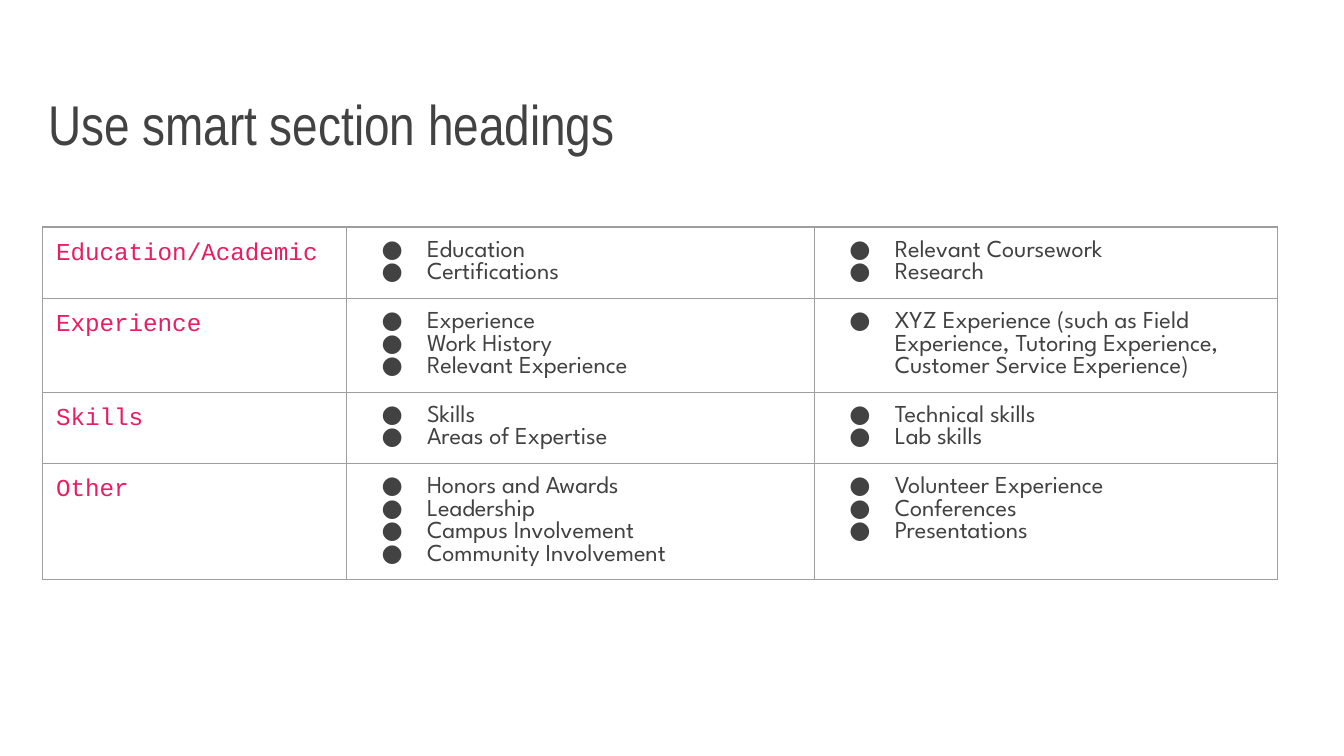
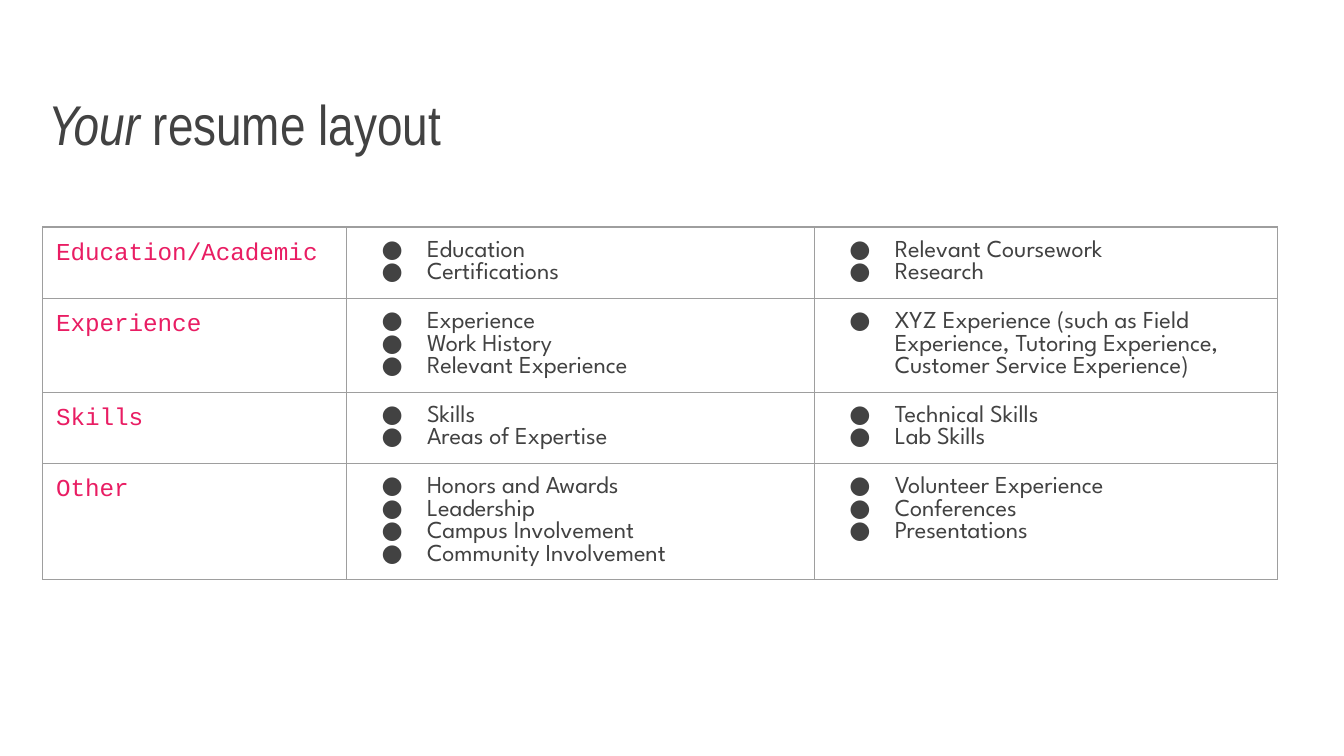
from lxml.etree import SubElement as Sub
from pptx import Presentation
from pptx.dml.color import RGBColor as RGB
from pptx.enum.text import MSO_ANCHOR as Anchor, MSO_AUTO_SIZE as Auto, PP_ALIGN as Align
from pptx.oxml.ns import qn
from pptx.util import Cm, Pt

INK = RGB(0x42, 0x42, 0x42)
PINK = RGB(0xE9, 0x1D, 0x63)
RULE = RGB(0x9E, 0x9E, 0x9E)
HEAD, LABEL, BODY = "Arial Narrow", "Courier New", "League Spartan"
INSET = Cm(0.25)
COLS = (5.74, 8.84, 8.76)
ROW = 1.07

GROUPS = (
    ("Education/Academic",
     ("Education", "Certifications"),
     ("Relevant Coursework", "Research")),
    ("Experience",
     ("Experience", "Work History", "Relevant Experience"),
     ("XYZ Experience (such as Field Experience, Tutoring Experience, "
      "Customer Service Experience)",)),
    ("Skills",
     ("Skills", "Areas of Expertise"),
     ()),
    ("Other",
     ("Honors and Awards", "Leadership", "Campus Involvement", "Community Involvement"),
     ("Volunteer Experience", "Conferences", "Presentations")),
)


def write(para, text, font=BODY, size=13, color=INK, italic=False):
    """Add one formatted run to a paragraph."""
    run = para.add_run()
    run.text = text
    run.font.name = font
    run.font.size = Pt(size)
    run.font.color.rgb = color
    run.font.italic = italic


def bullet(para):
    """Give a paragraph a hanging round bullet."""
    props = para._p.get_or_add_pPr()
    props.set("marL", str(Cm(1.27)))
    props.set("indent", str(Cm(-0.86)))
    tint = Sub(props, qn("a:buClr"))
    Sub(tint, qn("a:srgbClr"), val=str(INK))
    Sub(props, qn("a:buFont"), typeface=BODY)
    Sub(props, qn("a:buChar"), char="●")


def border(cell):
    """Draw a thin rule on all four sides of a cell."""
    props = cell._tc.get_or_add_tcPr()
    for side in "LRTB":
        line = Sub(props, qn(f"a:ln{side}"), w=str(Pt(0.75)))
        fill = Sub(line, qn("a:solidFill"))
        Sub(fill, qn("a:srgbClr"), val=str(RULE))


def pad(item):
    """Set the same inset on every side of a cell or text frame."""
    item.margin_left = item.margin_right = INSET
    item.margin_top = item.margin_bottom = INSET


def title(slide, *parts):
    """Place the title and write its (text, italic) parts."""
    shape = slide.shapes.title
    shape.left, shape.top = Cm(0.66), Cm(1.19)
    shape.width, shape.height = Cm(23.67), Cm(2.03)
    frame = shape.text_frame
    frame.auto_size = Auto.NONE
    frame.word_wrap = True
    frame.vertical_anchor = Anchor.BOTTOM
    pad(frame)
    para = frame.paragraphs[0]
    para.alignment = Align.LEFT
    for text, italic in parts:
        write(para, text, font=HEAD, size=30, italic=italic)


def listing(cell, items):
    """Fill a cell with a bulleted list."""
    frame = cell.text_frame
    for i, item in enumerate(items):
        para = frame.add_paragraph() if i else frame.paragraphs[0]
        bullet(para)
        write(para, item)


def grid(slide, skills):
    """Build the table of headings, with the given skills in its last column."""
    shape = slide.shapes.add_table(len(GROUPS), len(COLS), Cm(0.81), Cm(4.29),
                                   Cm(sum(COLS)), Cm(ROW * len(GROUPS)))
    table = shape.table
    table.first_row = table.horz_banding = False
    for col, width in zip(table.columns, COLS):
        col.width = Cm(width)
    for row, (name, left, right) in zip(table.rows, GROUPS):
        row.height = Cm(ROW)
        for cell in row.cells:
            pad(cell)
            border(cell)
            cell.fill.background()
        label, first, second = row.cells
        write(label.text_frame.paragraphs[0], name, font=LABEL, color=PINK)
        listing(first, left)
        listing(second, right or skills)


def main():
    """Build both slides and save them."""
    deck = Presentation()
    deck.slide_width, deck.slide_height = Cm(25.4), Cm(14.29)
    pages = (
        ([("Use smart section headings", False)], ("Technical skills", "Lab skills")),
        ([("Your", True), (" resume layout", False)], ("Technical Skills", "Lab Skills")),
    )
    for parts, skills in pages:
        slide = deck.slides.add_slide(deck.slide_layouts[5])
        title(slide, *parts)
        grid(slide, skills)
    deck.save("out.pptx")


if __name__ == "__main__":
    main()
